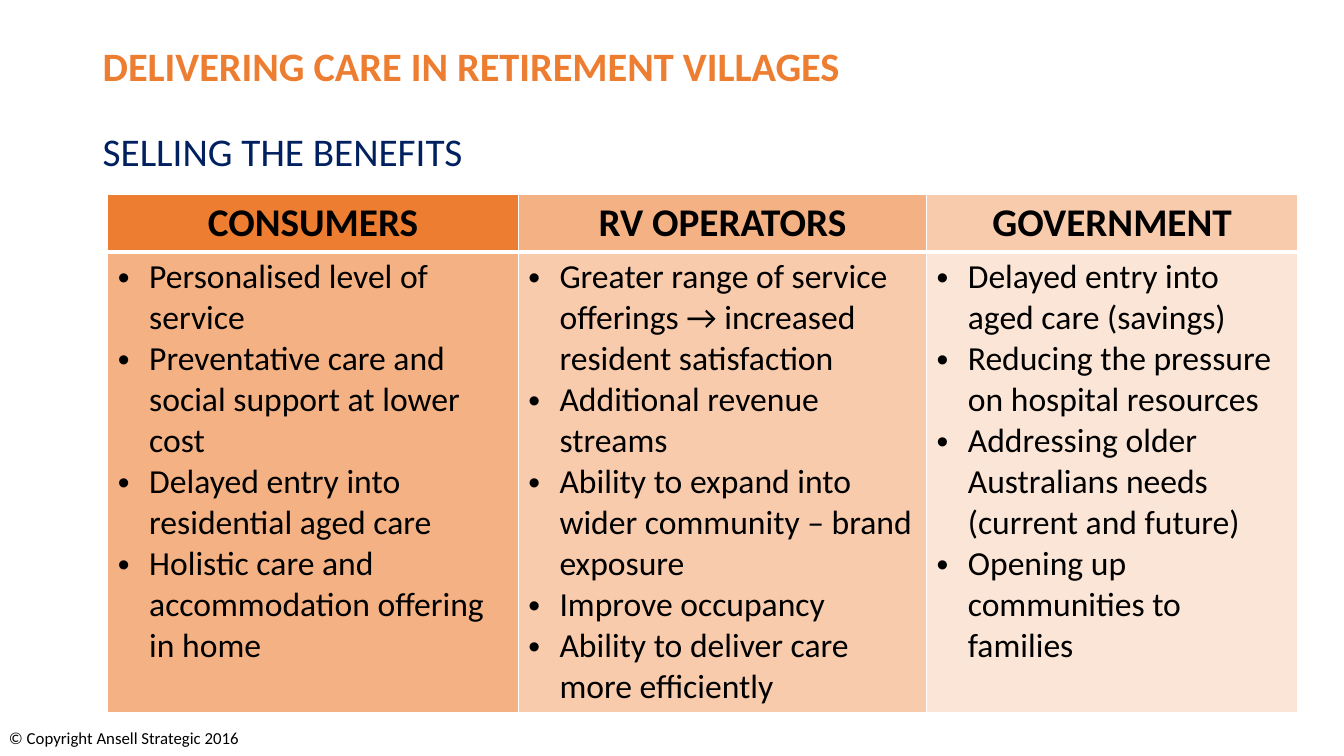
from lxml import etree
from pptx import Presentation
from pptx.dml.color import RGBColor
from pptx.enum.text import MSO_ANCHOR as Anchor, PP_ALIGN as Align
from pptx.oxml.ns import qn
from pptx.util import Inches, Pt

# Content
TITLE = "DELIVERING CARE IN RETIREMENT VILLAGES"
SUBTITLE = "SELLING THE BENEFITS"
COPYRIGHT = "© Copyright Ansell Strategic 2016"
# heading, column width, header fill, body fill, benefits
COLUMNS = [
    ("CONSUMERS", 4.07, "ED7D31", "F4B183", [
        "Personalised level of service",
        "Preventative care and social support at lower cost",
        "Delayed entry into residential aged care",
        "Holistic care and accommodation offering in home",
    ]),
    ("RV OPERATORS", 4.05, "F4B183", "F8CBAD", [
        "Greater range of service offerings → increased resident satisfaction",
        "Additional revenue streams",
        "Ability to expand into wider community – brand exposure",
        "Improve occupancy",
        "Ability to deliver care more efficiently",
    ]),
    ("GOVERNMENT", 3.68, "F8CBAD", "FBE5D6", [
        "Delayed entry into aged care (savings)",
        "Reducing the pressure on hospital resources",
        "Addressing older Australians needs (current and future)",
        "Opening up communities to families",
    ]),
]
ROW_HEIGHTS = (0.57, 4.57)

THEME = {
    "font": "Calibri", "title": "ED7D31", "subtitle": "002060",
    "text": "000000", "border": "FFFFFF",
    "title_size": 28.8, "heading_size": 28, "body_size": 24, "note_size": 12,
}


def style(p, size, color, bold=False, align=Align.LEFT):
    p.alignment = align
    for r in p.runs:
        r.font.name = THEME["font"]
        r.font.size = Pt(size)
        r.font.bold = bold
        r.font.color.rgb = RGBColor.from_string(color)


def add_text(s, box, text, size, color, bold=False, align=Align.LEFT,
             anchor=Anchor.MIDDLE, spacing=None):
    tf = s.shapes.add_textbox(*map(Inches, box)).text_frame
    tf.word_wrap = True
    tf.vertical_anchor = anchor
    tf.text = text
    tf.paragraphs[0].line_spacing = spacing
    style(tf.paragraphs[0], size, color, bold, align)


def add_bullet(p):
    pPr = p._p.get_or_add_pPr()
    pPr.set("marL", str(Inches(0.31)))
    pPr.set("indent", str(-Inches(0.31)))
    etree.SubElement(pPr, qn("a:buFont")).set("typeface", "Arial")
    etree.SubElement(pPr, qn("a:buChar")).set("char", "•")


def paint_cell(cell, fill, top, bottom):
    cell.fill.solid()
    cell.fill.fore_color.rgb = RGBColor.from_string(fill)
    tcPr = cell._tc.get_or_add_tcPr()
    widths = (("L", 1), ("R", 1), ("T", top), ("B", bottom))
    for i, (side, width) in enumerate(widths):
        ln = etree.Element(qn(f"a:ln{side}"), w=str(Pt(width)))
        solid = etree.SubElement(ln, qn("a:solidFill"))
        etree.SubElement(solid, qn("a:srgbClr")).set("val", THEME["border"])
        tcPr.insert(i, ln)


def add_benefits(s):
    width = sum(column[1] for column in COLUMNS)
    box = map(Inches, (1.07, 1.93, width, sum(ROW_HEIGHTS)))
    table = s.shapes.add_table(2, len(COLUMNS), *box).table
    for row, height in zip(table.rows, ROW_HEIGHTS):
        row.height = Inches(height)
    for i, (heading, width, head_fill, body_fill, benefits) in enumerate(COLUMNS):
        table.columns[i].width = Inches(width)
        # Header cell
        head = table.cell(0, i)
        paint_cell(head, head_fill, 1, 3)
        head.vertical_anchor = Anchor.MIDDLE
        head.text_frame.text = heading
        style(head.text_frame.paragraphs[0], THEME["heading_size"],
              THEME["text"], True, Align.CENTER)
        # Bulleted cell
        body = table.cell(1, i)
        paint_cell(body, body_fill, 3, 1)
        body.text_frame.text = "\n".join(benefits)
        for p in body.text_frame.paragraphs:
            add_bullet(p)
            style(p, THEME["body_size"], THEME["text"])


def main():
    prs = Presentation()
    prs.slide_width, prs.slide_height = Inches(13.33), Inches(7.5)
    s = prs.slides.add_slide(prs.slide_layouts[6])

    # Headings
    add_text(s, (0.92, 0.4, 11.5, 0.56), TITLE, THEME["title_size"],
             THEME["title"], bold=True, spacing=0.9)
    add_text(s, (0.92, 1.27, 6.34, 0.55), SUBTITLE, THEME["heading_size"],
             THEME["subtitle"], anchor=Anchor.TOP, spacing=0.9)
    # Footer
    add_text(s, (-0.27, 7.12, 3, 0.4), COPYRIGHT, THEME["note_size"],
             THEME["text"], align=Align.CENTER)
    # Benefits table
    add_benefits(s)
    prs.save("out.pptx")


if __name__ == "__main__":
    main()
